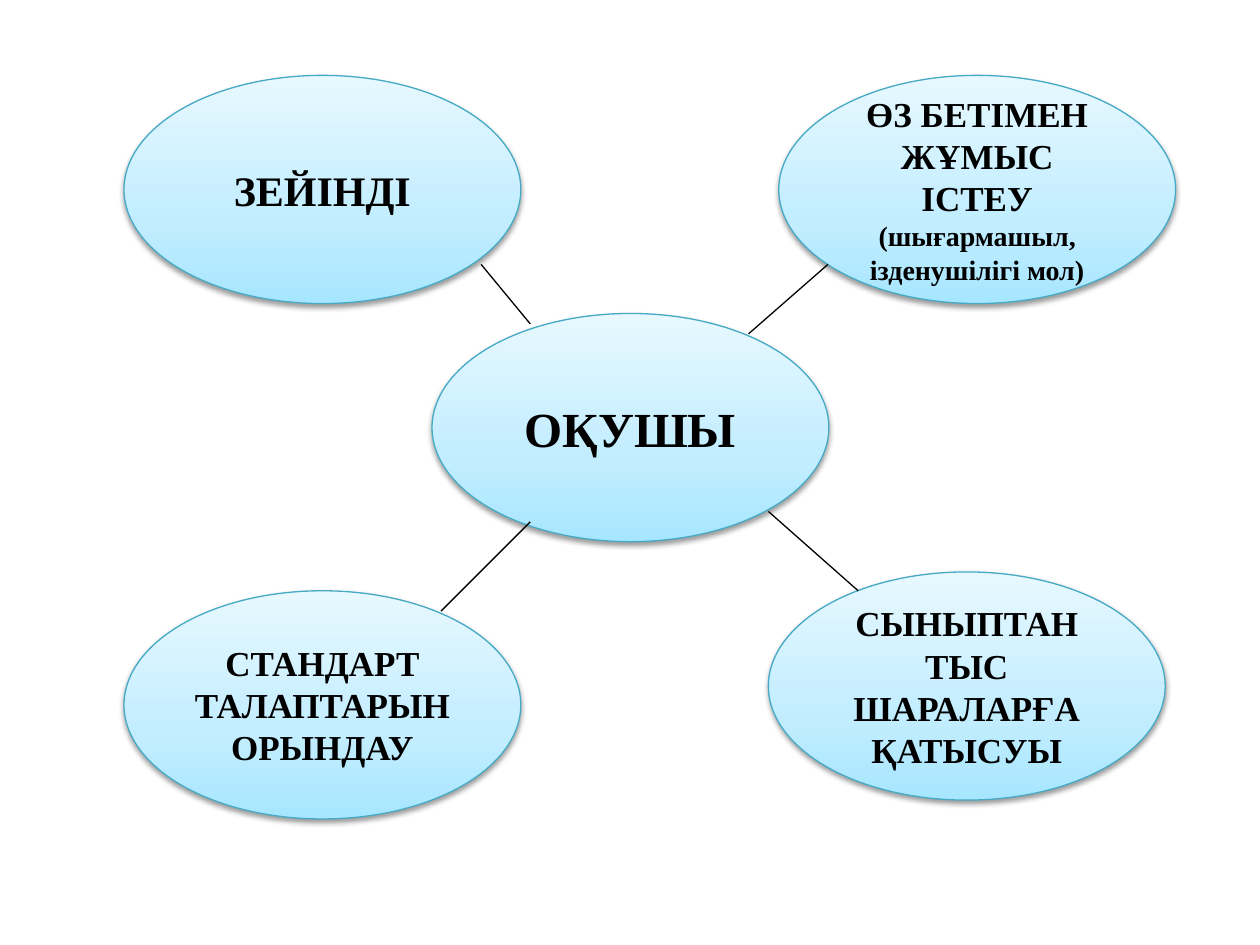
from copy import deepcopy
from dataclasses import dataclass
from typing import NamedTuple

from lxml import etree
from pptx import Presentation
from pptx import util as u
from pptx.dml.color import RGBColor
from pptx.enum import shapes, text
from pptx.oxml import ns


@dataclass(frozen=True)
class Theme:
    font: str = "Times New Roman"
    ink: RGBColor = RGBColor(0, 0, 0)
    outline: RGBColor = RGBColor(0x46, 0xAA, 0xC5)
    gradient: tuple = ((0, "A7E6FF"), (0.35, "C1EDFF"), (1, "E7F8FF"))
    line_width: u.Pt = u.Pt(0.75)
    center_size: int = 28
    short_size: int = 24
    body_size: int = 20
    detail_size: int = 16


class Phrase(NamedTuple):
    words: str
    size: int


class Bubble(NamedTuple):
    left: float
    top: float
    phrases: tuple[Phrase, ...]


class Link(NamedTuple):
    start: tuple[float, float]
    end: tuple[float, float]


THEME = Theme()
BUBBLE_WIDTH, BUBBLE_HEIGHT = 8, 4.6
LEFT_COLUMN, TOP_ROW = 2.5, 1.52

# All positions are in centimetres
BUBBLES = (
    Bubble(8.71, 6.32, (Phrase("ОҚУШЫ", THEME.center_size),)),
    Bubble(LEFT_COLUMN, TOP_ROW, (Phrase("ЗЕЙІНДІ", THEME.short_size),)),
    Bubble(LEFT_COLUMN, 11.91,
           (Phrase("СТАНДАРТ ТАЛАПТАРЫН ОРЫНДАУ", THEME.body_size),)),
    Bubble(15.7, TOP_ROW,
           (Phrase("ӨЗ БЕТІМЕН ЖҰМЫС ІСТЕУ ", THEME.body_size),
            Phrase("(шығармашыл, ізденушілігі мол)", THEME.detail_size))),
    Bubble(15.49, 11.53,
           (Phrase("СЫНЫПТАН ТЫС ШАРАЛАРҒА ҚАТЫСУЫ", THEME.body_size),)),
)
LINKS = (
    Link((10.69, 10.52), (8.89, 12.32)),
    Link((15.49, 10.31), (17.3, 11.91)),
    Link((15.09, 6.73), (16.69, 5.33)),
    Link((10.69, 6.53), (9.7, 5.33)),
)


def fill_gradient(oval) -> None:
    """Three stops, running from the bottom edge upwards."""
    oval.fill.gradient()
    oval.fill.gradient_angle = 90
    stop_list = oval._element.spPr.find(".//" + ns.qn("a:gsLst"))
    stop_list.append(deepcopy(stop_list[-1]))
    for stop, (position, color) in zip(oval.fill.gradient_stops, THEME.gradient):
        stop.position = position
        stop.color.rgb = RGBColor.from_string(color)


def add_soft_shadow(oval) -> None:
    oval.shadow.inherit = False
    effects = oval._element.spPr.find(ns.qn("a:effectLst"))
    shadow = etree.SubElement(
        effects, ns.qn("a:outerShdw"), blurRad=str(u.Pt(3.1)),
        dist=str(u.Pt(1.6)), dir="5400000", rotWithShape="0")
    color = etree.SubElement(shadow, ns.qn("a:srgbClr"), val=str(THEME.ink))
    etree.SubElement(color, ns.qn("a:alpha"), val="38000")


def draw_bubble(slide, bubble: Bubble) -> None:
    oval = slide.shapes.add_shape(
        shapes.MSO_SHAPE.OVAL, u.Cm(bubble.left), u.Cm(bubble.top),
        u.Cm(BUBBLE_WIDTH), u.Cm(BUBBLE_HEIGHT))
    fill_gradient(oval)
    oval.line.color.rgb = THEME.outline
    oval.line.width = THEME.line_width
    add_soft_shadow(oval)

    frame = oval.text_frame
    frame.word_wrap = True
    frame.vertical_anchor = text.MSO_ANCHOR.MIDDLE
    label = frame.paragraphs[0]
    label.alignment = text.PP_ALIGN.CENTER
    for phrase in bubble.phrases:
        run = label.add_run()
        run.text = phrase.words
        run.font.name = THEME.font
        run.font.size = u.Pt(phrase.size)
        run.font.bold = True
        run.font.color.rgb = THEME.ink


def draw_link(slide, link: Link) -> None:
    connector = slide.shapes.add_connector(
        shapes.MSO_CONNECTOR.STRAIGHT,
        *(u.Cm(value) for value in link.start + link.end))
    connector.line.color.rgb = THEME.ink
    connector.line.width = THEME.line_width
    etree.SubElement(connector._element.spPr, ns.qn("a:effectLst"))


def main() -> None:
    deck = Presentation()
    deck.slide_width, deck.slide_height = u.Cm(25.4), u.Cm(19.05)
    slide = deck.slides.add_slide(deck.slide_layouts[6])  # blank: no title here

    # Pupil in the centre, qualities around
    for bubble in BUBBLES:
        draw_bubble(slide, bubble)

    # Lines from the centre to each quality
    for link in LINKS:
        draw_link(slide, link)

    deck.save("out.pptx")


if __name__ == "__main__":
    main()
